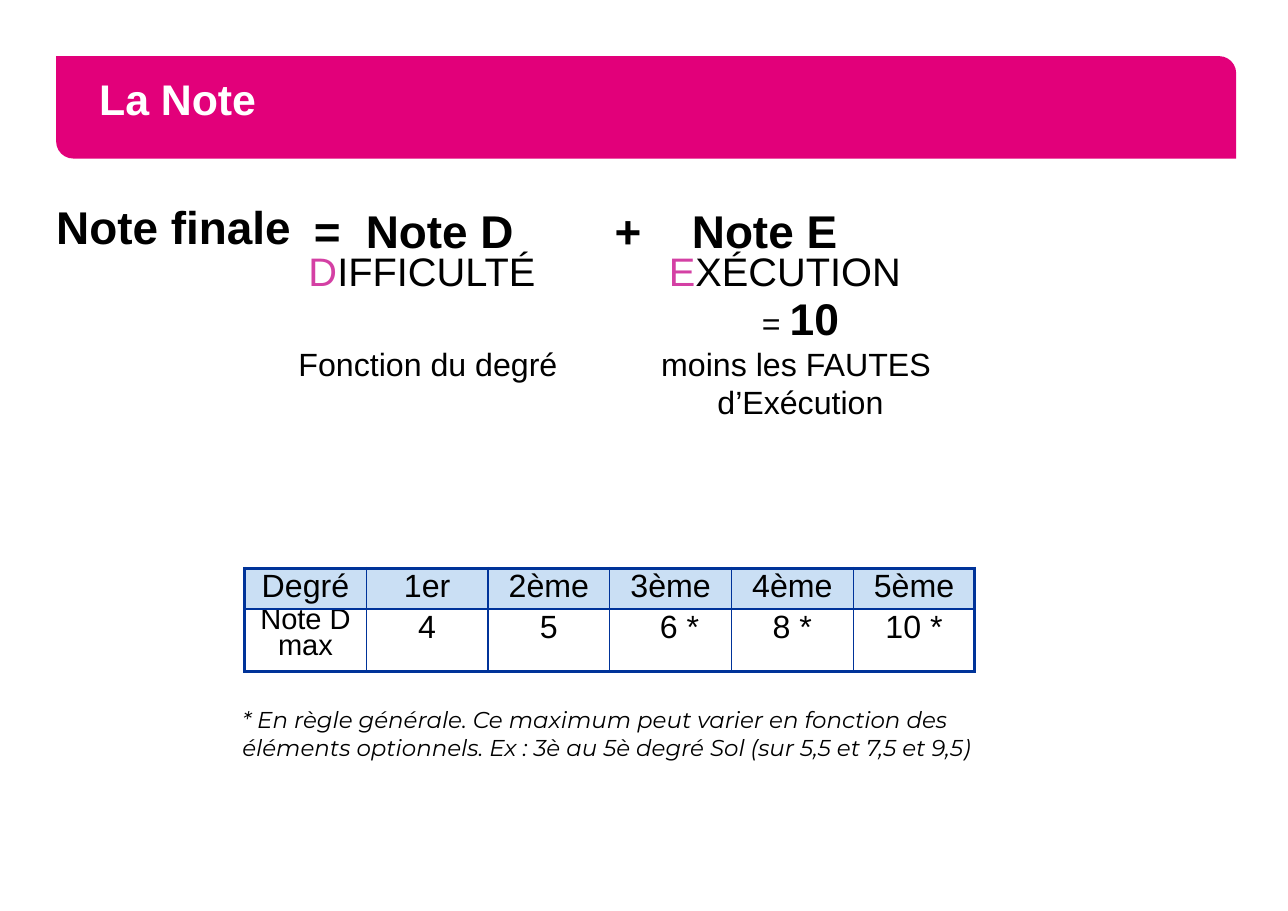
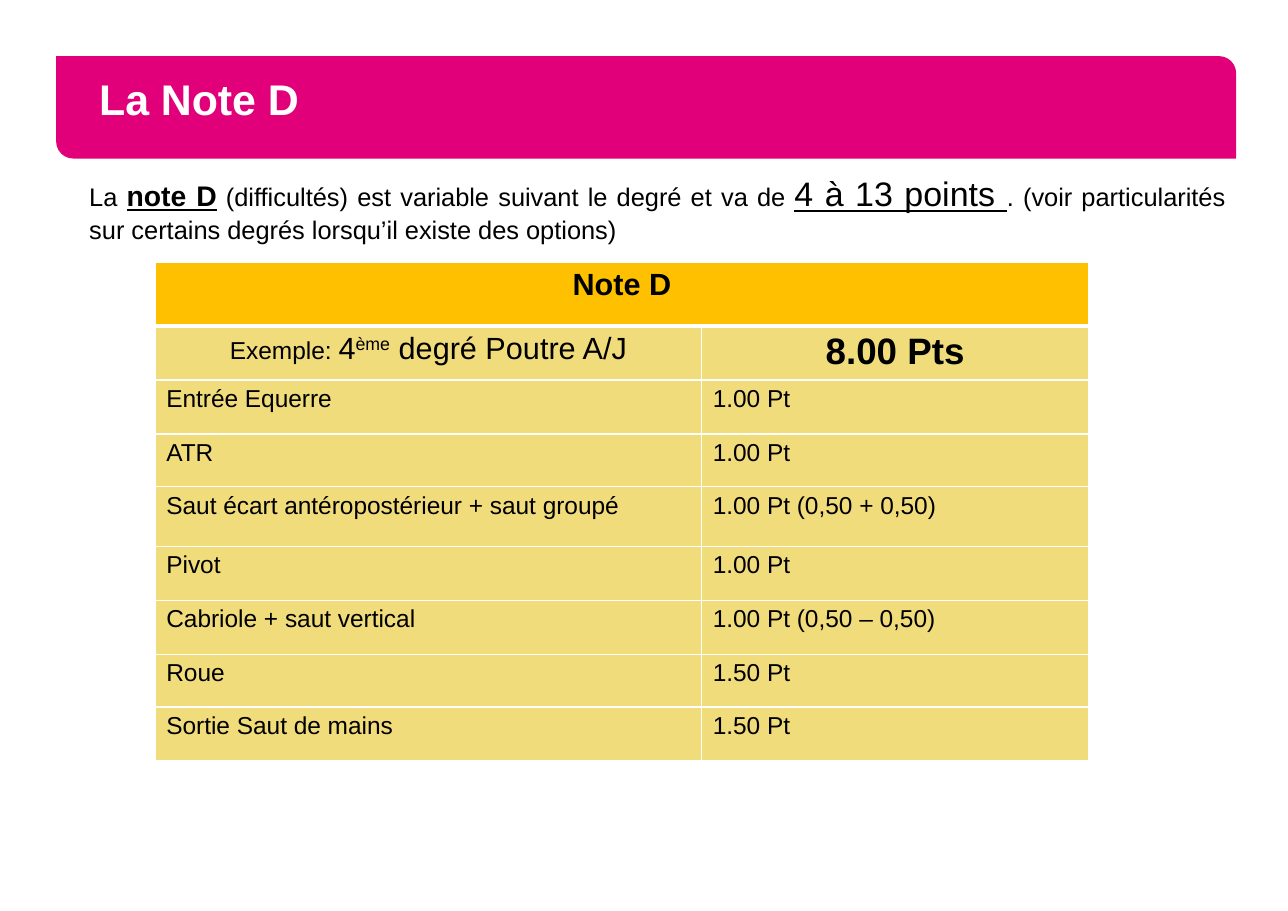
from lxml import etree
from pptx import Presentation
from pptx.dml.color import RGBColor
from pptx.enum.shapes import MSO_SHAPE
from pptx.enum.text import MSO_ANCHOR, MSO_AUTO_SIZE, PP_ALIGN
from pptx.oxml.ns import qn
from pptx.util import Pt

LEFT, CENTER, JUSTIFY = PP_ALIGN.LEFT, PP_ALIGN.CENTER, PP_ALIGN.JUSTIFY
BAND = MSO_SHAPE.ROUND_2_DIAG_RECTANGLE
MIDDLE, TOP = MSO_ANCHOR.MIDDLE, MSO_ANCHOR.TOP
NO_FIT = MSO_AUTO_SIZE.NONE

PX = 9144  # 100 px to the inch
PINK, VIOLET, WHITE, BLACK = "E2007A", "D440A4", "FFFFFF", "000000"
NAVY, SKY, GOLD, SAND = "003399", "CADFF4", "FFC000", "F1DC7C"
rgb = RGBColor.from_string


def add_run(p, text, size=21, color=BLACK, bold=False, italic=False,
            underline=False, font="Arial", baseline=0):
    r = p.add_run()
    r.text = text
    f = r.font
    f.name, f.size, f.color.rgb = font, Pt(size), rgb(color)
    f.bold, f.italic, f.underline = bold, italic, underline
    if baseline:
        r._r.get_or_add_rPr().set("baseline", str(baseline * 1000))


def style_cell(cell, fill, color, left=1, right=1, top=1, bottom=1):
    tcPr = cell._tc.get_or_add_tcPr()
    for tag, width in (("lnL", left), ("lnR", right), ("lnT", top), ("lnB", bottom)):
        ln = etree.SubElement(tcPr, qn("a:" + tag), w=str(Pt(width)))
        solid = etree.SubElement(ln, qn("a:solidFill"))
        etree.SubElement(solid, qn("a:srgbClr"), val=color)
    if fill:
        cell.fill.solid()
        cell.fill.fore_color.rgb = rgb(fill)
    else:
        cell.fill.background()


prs = Presentation()
prs.slide_width, prs.slide_height = 1169 * PX, 827 * PX
layout = prs.slide_layouts[1]

# Title, body box, body margins (x, y), indent, line spacing, alignment, runs
term = dict(size=30, bold=True)
pages = [
    ("La Note", (51, 197, 220, 48), (0, 0), 0, Pt(24), LEFT,
     [("Note finale", term)]),
    ("La Note D", (51, 152, 1071, 71), (10, 5), 20, 1.0, JUSTIFY,
     [("La ", dict(size=16.6)),
      ("note D", dict(size=18.5, bold=True, underline=True)),
      (" (difficultés) est variable suivant le degré et va de ", dict(size=16.6)),
      ("4 à 13 points ", dict(size=22.2, underline=True)),
      (". (voir particularités sur certains degrés lorsqu’il existe des options)",
       dict(size=16.6))]),
]

slides = [prs.slides.add_slide(layout) for _ in pages]

# Shared band and title frame, kept on the layout
title_box = [v * PX for v in (51, 51, 1071, 93)]
band = slides[0].shapes.add_shape(BAND, *title_box)
band.adjustments[0], band.adjustments[1] = 0, 0.1667
band.shadow.inherit = False
band.fill.solid()
band.fill.fore_color.rgb = rgb(PINK)
band.line.fill.background()
layout.shapes.element.insert(2, band.element)

# Titles and body texts
for s, (title, box, (mx, my), indent, spacing, align, runs) in zip(slides, pages):
    sp = s.shapes.title
    sp.left, sp.top, sp.width, sp.height = title_box
    tf = sp.text_frame
    tf.vertical_anchor, tf.auto_size = MIDDLE, NO_FIT
    tf.margin_left = tf.margin_right = 39 * PX
    p = tf.paragraphs[0]
    p.alignment, p.line_spacing = LEFT, Pt(22)
    add_run(p, title, size=28, color=WHITE, bold=True)

    sp = s.placeholders[1]
    sp.left, sp.top, sp.width, sp.height = [v * PX for v in box]
    tf = sp.text_frame
    tf.vertical_anchor, tf.auto_size = TOP, NO_FIT
    tf.margin_left = tf.margin_right = mx * PX
    tf.margin_top = tf.margin_bottom = my * PX
    p = tf.paragraphs[0]
    p.alignment, p.line_spacing, p.space_before = align, spacing, Pt(0)
    pPr = p._p.get_or_add_pPr()
    pPr.set("marL", str(indent * PX))
    pPr.set("indent", "0")
    etree.SubElement(pPr, qn("a:buNone"))
    for text, fmt in runs:
        add_run(p, text, **fmt)

# Slide 1: formula terms with their labels, explanations and footnote
note, note_d = slides
texts = [((x, 179, width, 58), LEFT, [[(text, term)]])
         for x, width, text in ((280, 40, "="), (327, 150, "Note D"),
                                (553, 40, "+"), (623, 150, "Note E"))]
texts += [((x, 219, 235, 51), LEFT,
           [[(initial, dict(size=26, color=VIOLET)), (rest, dict(size=26))]])
          for x, initial, rest in ((275, "D", "IFFICULTÉ"), (602, "E", "XÉCUTION"))]
texts += [
    ((594, 259, 265, 130), CENTER, [
        [("= ", {}), ("10", dict(size=29, bold=True))],
        [("moins les FAUTES ", {})],
        [("d’Exécution", {})]]),
    ((215, 636, 678, 86), LEFT, [
        [("* En règle générale. Ce maximum peut varier en fonction des éléments "
          "optionnels. Ex : 3è au 5è degré Sol (sur 5,5 et 7,5 et 9,5)",
          dict(size=15, font="Montserrat", italic=True))]]),
    ((255, 308, 267, 45), CENTER, [[("Fonction du degré", {})]]),
]
for box, align, paragraphs in texts:
    tf = note.shapes.add_textbox(*[v * PX for v in box]).text_frame
    tf.word_wrap = True
    tf.margin_left = tf.margin_right = tf.margin_top = tf.margin_bottom = 5 * PX
    for i, runs in enumerate(paragraphs):
        p = tf.add_paragraph() if i else tf.paragraphs[0]
        p.alignment = align
        for text, fmt in runs:
            add_run(p, text, **fmt)

# Slide 1: maximum by degree
degrees = [
    ["Degré", "1er", "2ème", "3ème", "4ème", "5ème"],
    ["Note D max", "4", "5", "6 *", "8 *", "10 *"],
]
table = note.shapes.add_table(2, 6, 222 * PX, 516 * PX, 663 * PX, 94 * PX).table
table.first_row = table.horz_banding = False
for col in table.columns:
    col.width = 663 * PX // 6
for r, (row, height) in enumerate(zip(degrees, (37, 57))):
    table.rows[r].height = height * PX
    for c, text in enumerate(row):
        cell = table.cell(r, c)
        cell.margin_left = cell.margin_right = cell.margin_top = cell.margin_bottom = 0
        p = cell.text_frame.paragraphs[0]
        p.alignment = CENTER
        if text == "Note D max":
            p.line_spacing = 0.8
        if text == "6 *":
            cell.margin_left = 16 * PX
        add_run(p, text, size=19 if text == "Note D max" else 21)
        style_cell(cell, None if r else SKY, NAVY,
                   left=1 if c else 2.25, right=2.25 if c == 5 else 1,
                   top=1 if r else 2.25, bottom=2.25 if r else 1)

# Slide 2: worked example
example = [
    ([("Note D", dict(size=20, bold=True))], []),
    ([("Exemple: ", dict(size=16)), ("4", dict(size=20)),
      ("ème", dict(size=20, baseline=30)), (" degré Poutre A/J", dict(size=20))],
     [("8.00 Pts", dict(size=24, bold=True))]),
]
elements = [
    ("Entrée Equerre", "1.00 Pt"),
    ("ATR", "1.00 Pt"),
    ("Saut écart antéropostérieur + saut groupé", "1.00 Pt (0,50 + 0,50)"),
    ("Pivot", "1.00 Pt"),
    ("Cabriole + saut vertical", "1.00 Pt (0,50 – 0,50)"),
    ("Roue", "1.50 Pt"),
    ("Sortie Saut de mains", "1.50 Pt"),
]
example += [[[(text, dict(size=16))] for text in row] for row in elements]
heights = [58, 49, 49, 48, 54, 49, 49, 48, 49]
table = note_d.shapes.add_table(len(example), 2, 141 * PX, 238 * PX,
                                847 * PX, sum(heights) * PX).table
table.first_row = table.horz_banding = False
table.columns[0].width, table.columns[1].width = 496 * PX, 351 * PX
table.cell(0, 0).merge(table.cell(0, 1))
for r, (row, height) in enumerate(zip(example, heights)):
    table.rows[r].height = height * PX
    for c, runs in enumerate(row):
        cell = table.cell(r, c)
        p = cell.text_frame.paragraphs[0]
        p.alignment = CENTER if r < 2 else LEFT
        for text, fmt in runs:
            add_run(p, text, **fmt)
        style_cell(cell, SAND if r else GOLD, WHITE,
                   top=3 if r == 1 else 1, bottom=1 if r else 3)

prs.save("out.pptx")
